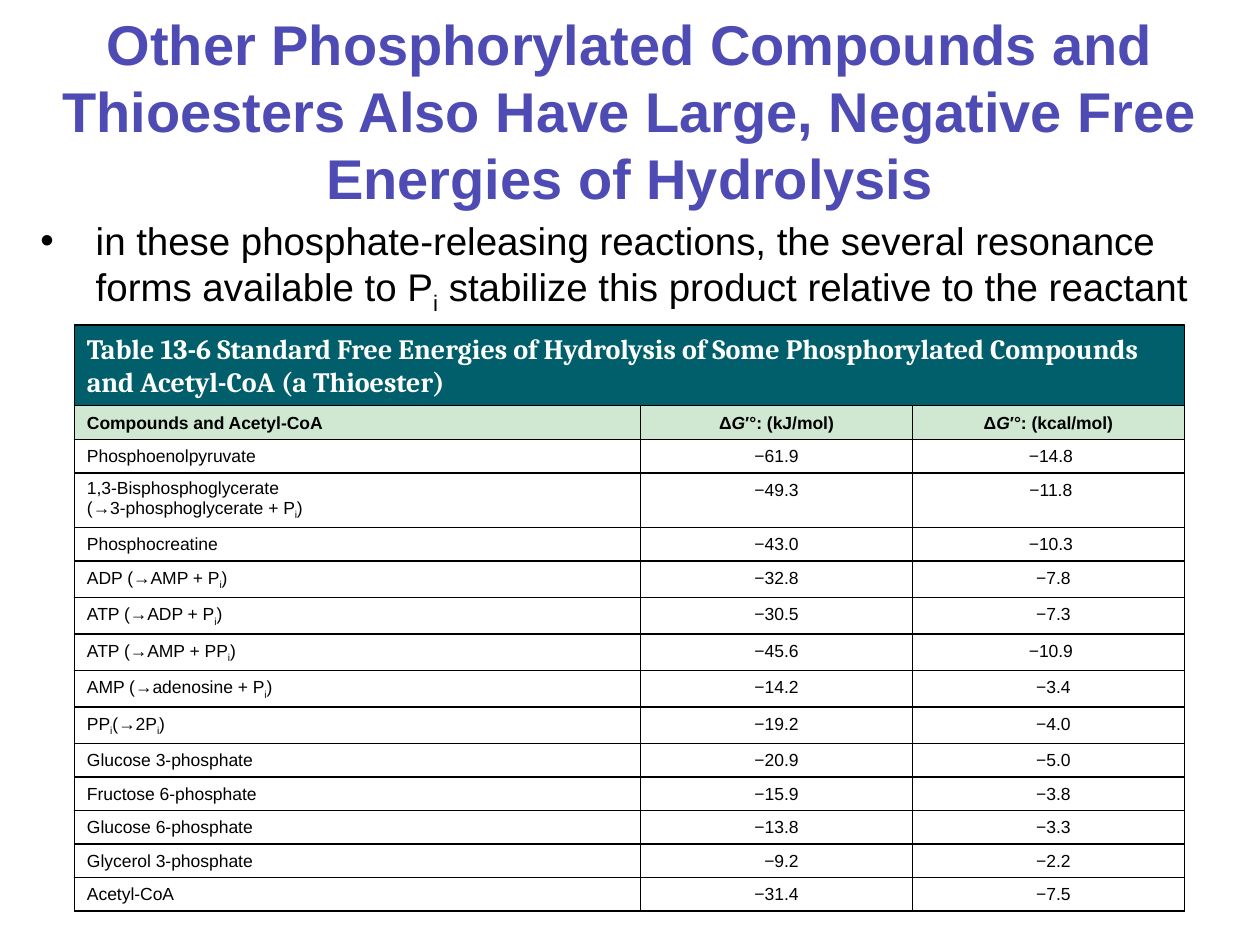
from lxml.etree import SubElement
from pptx import Presentation
from pptx.dml.color import RGBColor
from pptx.enum.shapes import MSO_SHAPE
from pptx.enum.text import MSO_ANCHOR, MSO_AUTO_SIZE, PP_ALIGN
from pptx.oxml.ns import qn
from pptx.util import Inches, Pt

BLACK = RGBColor(0x00, 0x00, 0x00)
WHITE = RGBColor(0xFF, 0xFF, 0xFF)
VIOLET = RGBColor(0x4E, 0x4C, 0xB4)
TEAL = RGBColor(0x00, 0x5F, 0x6A)
MINT = RGBColor(0xD0, 0xE7, 0xD2)

WIDTH, HEIGHT = Inches(10), Inches(7.5)
LEFT, TABLE_WIDTH = Inches(0.59), Inches(8.81)
BANNER_TOP, BANNER_HEIGHT = Inches(2.58), Inches(0.64)
COLUMN_SHARES = (0.51, 0.245, 0.245)
ROW_HEIGHT = Inches(0.19)
SIGN_PAD = Inches(0.04)

TITLE_FONT = {"name": "Arial", "size": Pt(32), "bold": True}
BODY_FONT = {"name": "Arial", "size": Pt(22), "bold": False}
BANNER_FONT = {"name": "Cambria", "size": Pt(16), "bold": True}
HEAD_FONT = {"name": "Arial", "size": Pt(10), "bold": True}
CELL_FONT = {**HEAD_FONT, "bold": False}

TITLE = ("Other Phosphorylated Compounds and Thioesters Also Have Large, "
         "Negative Free Energies of Hydrolysis")
BODY = ("in these phosphate-releasing reactions, the several resonance forms "
        "available to P_i_ stabilize this product relative to the reactant")
BANNER = ("Table 13-6 Standard Free Energies of Hydrolysis of Some "
          "Phosphorylated Compounds and Acetyl-CoA (a Thioester)")
HEADINGS = ("Compounds and Acetyl-CoA", "Δ*G*′°: (kJ/mol)", "Δ*G*′°: (kcal/mol)")
ENERGIES = (
    ("Phosphoenolpyruvate", "−61.9", "−14.8"),
    ("1,3-Bisphosphoglycerate\n(→3-phosphoglycerate + P_i_)", "−49.3", "−11.8"),
    ("Phosphocreatine", "−43.0", "−10.3"),
    ("ADP (→AMP + P_i_)", "−32.8", "−7.8"),
    ("ATP (→ADP + P_i_)", "−30.5", "−7.3"),
    ("ATP (→AMP + PP_i_)", "−45.6", "−10.9"),
    ("AMP (→adenosine + P_i_)", "−14.2", "−3.4"),
    ("PP_i_(→2P_i_)", "−19.2", "−4.0"),
    ("Glucose 3-phosphate", "−20.9", "−5.0"),
    ("Fructose 6-phosphate", "−15.9", "−3.8"),
    ("Glucose 6-phosphate", "−13.8", "−3.3"),
    ("Glycerol 3-phosphate", "−9.2", "−2.2"),
    ("Acetyl-CoA", "−31.4", "−7.5"),
)


def apply(target, values):
    """Set each attribute named in a dict of format values."""
    for name, value in values.items():
        setattr(target, name, value)


def add_spans(para, text, font, color):
    """Write text in which _x_ is a subscript and *x* is italic."""
    for i, part in enumerate(text.split("_")):
        for j, piece in enumerate(part.split("*")):
            if not piece:
                continue
            span = para.add_run()
            span.text = piece
            apply(span.font, font)
            span.font.color.rgb = color
            if j % 2:
                span.font.italic = True
            if i % 2:
                span._r.get_or_add_rPr().set("baseline", "-25000")


def fill_frame(frame, text, font, color, **layout):
    """Write one paragraph per line of text and lay each one out."""
    for number, line in enumerate(text.split("\n")):
        para = frame.add_paragraph() if number else frame.paragraphs[0]
        apply(para, layout)
        add_spans(para, line, font, color)


def place(shape, left, top, width, height):
    """Move and size a shape."""
    apply(shape, {"left": left, "top": top, "width": width, "height": height})


def add_heading(page):
    """Fill the title and body placeholders."""
    title, body = page.shapes.title, page.placeholders[1]
    place(title, 0, 0, WIDTH, Inches(1.75))
    place(body, Inches(0.16), Inches(1.67), Inches(9.68), Inches(2.19))
    for box in (title, body):
        apply(box.text_frame, {"word_wrap": True, "auto_size": MSO_AUTO_SIZE.NONE})
    title.text_frame.vertical_anchor = MSO_ANCHOR.MIDDLE
    fill_frame(title.text_frame, TITLE, TITLE_FONT, VIOLET, alignment=PP_ALIGN.CENTER)
    fill_frame(body.text_frame, BODY, BODY_FONT, BLACK)
    props = body.text_frame.paragraphs[0]._p.get_or_add_pPr()
    props.set("marL", str(Inches(0.5)))
    props.set("indent", str(-Inches(0.44)))
    SubElement(props, qn("a:buChar")).set("char", "•")


def add_banner(page):
    """Draw the caption bar above the table."""
    bar = page.shapes.add_shape(
        MSO_SHAPE.RECTANGLE, LEFT, BANNER_TOP, TABLE_WIDTH, BANNER_HEIGHT)
    bar.shadow.inherit = False
    bar.fill.solid()
    bar.fill.fore_color.rgb = TEAL
    bar.line.color.rgb = BLACK
    bar.line.width = Pt(0.75)
    apply(bar.text_frame, {"word_wrap": True, "vertical_anchor": MSO_ANCHOR.TOP,
                           "auto_size": MSO_AUTO_SIZE.SHAPE_TO_FIT_TEXT})
    fill_frame(bar.text_frame, BANNER, BANNER_FONT, WHITE, alignment=PP_ALIGN.LEFT)


def style_cell(cell, fill):
    """Give a cell black borders and a fill, or none."""
    props = cell._tc.get_or_add_tcPr()
    for side in ("a:lnL", "a:lnR", "a:lnT", "a:lnB"):
        line = SubElement(props, qn(side), w=str(Pt(1)))
        paint = SubElement(line, qn("a:solidFill"))
        SubElement(paint, qn("a:srgbClr"), val=str(BLACK))
    if fill is None:
        cell.fill.background()
    else:
        cell.fill.solid()
        cell.fill.fore_color.rgb = fill


def value_pad(text, column):
    """Return the extra left margin that lines up the decimal points."""
    if len(text) < len("−00.0"):
        return 2 * SIGN_PAD
    return SIGN_PAD if column == 2 else 0


def add_energy_table(page):
    """Build the table of hydrolysis energies under the banner."""
    rows = (HEADINGS, *ENERGIES)
    table = page.shapes.add_table(
        len(rows), len(HEADINGS), LEFT, BANNER_TOP + BANNER_HEIGHT,
        TABLE_WIDTH, ROW_HEIGHT * len(rows)).table
    table.horz_banding = False
    for column, share in zip(table.columns, COLUMN_SHARES):
        column.width = int(TABLE_WIDTH * share)
    for r, row in enumerate(rows):
        table.rows[r].height = ROW_HEIGHT
        for c, text in enumerate(row):
            cell = table.cell(r, c)
            style_cell(cell, None if r else MINT)
            if r and c:
                cell.margin_left = Inches(0.1) + value_pad(text, c)
            fill_frame(cell.text_frame, text, CELL_FONT if r else HEAD_FONT, BLACK,
                       alignment=PP_ALIGN.CENTER if c else PP_ALIGN.LEFT,
                       line_spacing=1.0 if "\n" in text else 1.07)


def main():
    """Build and save the slide."""
    deck = Presentation()
    apply(deck, {"slide_width": WIDTH, "slide_height": HEIGHT})
    page = deck.slides.add_slide(deck.slide_layouts[1])
    add_heading(page)
    add_energy_table(page)
    add_banner(page)
    deck.save("out.pptx")


if __name__ == "__main__":
    main()
